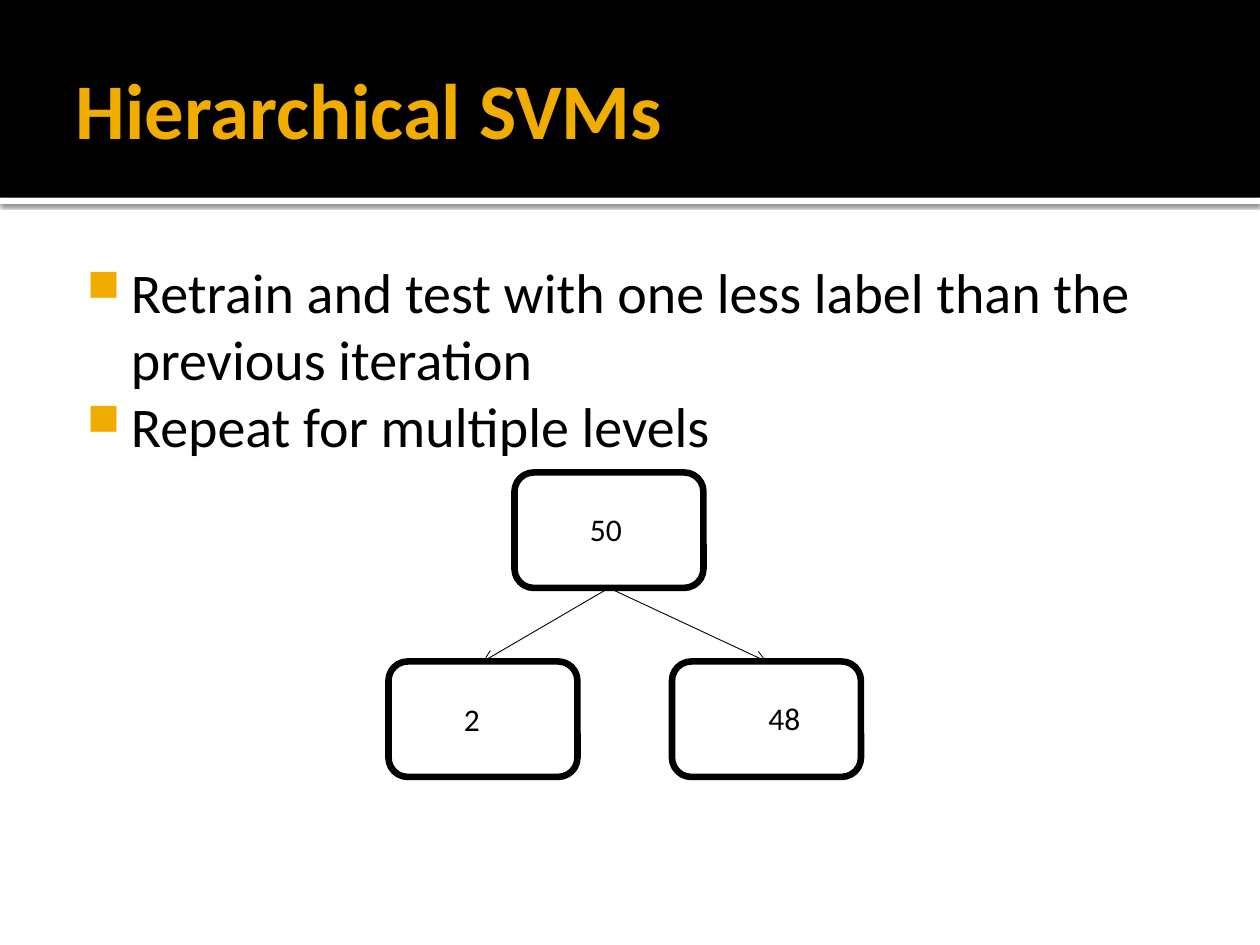
from lxml import etree
from pptx import Presentation
from pptx.dml.color import RGBColor
from pptx.enum import shapes, text
from pptx.oxml import parse_xml
from pptx.oxml.ns import nsdecls, qn
from pptx.util import Pt

BLACK = RGBColor(0, 0, 0)
WHITE = RGBColor(255, 255, 255)
GOLD = RGBColor(0xF0, 0xAD, 0)
FONT = "Calibri"
NODE_W, NODE_H = 108, 66
BULLETS = (
    "Retrain and test with one less label than the previous iteration",
    "Repeat for multiple levels",
)
# Node left and top, then label text, left, top and width
NODES = (
    (294, 270, "50", 330, 288, 48),
    (222, 378, "2", 258, 396.5, 36),
    (384, 378, "48", 432, 396, 54),
)
FORK = (348, 336)
ENDS = ((276, 378), (438, 378))


def style(para, size, color, bold=False):
    for run in para.runs:
        font = run.font
        font.name, font.size, font.bold = FONT, Pt(size), bold
        font.color.rgb = color


def inset(frame, *sides):
    """Set the left, top, right and bottom margins."""
    (frame.margin_left, frame.margin_top,
     frame.margin_right, frame.margin_bottom) = map(Pt, sides)


def add_box(slide, kind, x, y, w, h, fill, line=0):
    box = slide.shapes.add_shape(kind, Pt(x), Pt(y), Pt(w), Pt(h))
    box.shadow.inherit = False
    box.fill.solid()
    box.fill.fore_color.rgb = fill
    if line:
        box.line.color.rgb = BLACK
        box.line.width = Pt(line)
    else:
        box.line.fill.background()
    return box


def add_band(slide):
    """Draw the black header and the white strip that casts a shadow."""
    rect = shapes.MSO_SHAPE.RECTANGLE
    strip = add_box(slide, rect, 0, 113, 720, 3.6, WHITE)
    effects = strip._element.spPr.find(qn("a:effectLst"))
    effects.append(parse_xml(
        f'<a:outerShdw {nsdecls("a")} blurRad="{Pt(2.5)}" dist="{Pt(0.8)}" '
        'dir="5400000" algn="tl" rotWithShape="0"><a:srgbClr val="000000">'
        '<a:alpha val="60000"/></a:srgbClr></a:outerShdw>'))
    add_box(slide, rect, 0, 0, 720, 113, BLACK)


def set_title(slide, words):
    title = slide.shapes.title
    slide.shapes._spTree.append(title._element)  # in front of the band
    title.left, title.top, title.width, title.height = map(
        Pt, (36, 12.2, 648, 98.6))
    frame = title.text_frame
    frame.text = words
    frame.vertical_anchor = text.MSO_ANCHOR.MIDDLE
    inset(frame, 7.2, 3.6, 3.6, 3.6)
    para = frame.paragraphs[0]
    para.alignment = text.PP_ALIGN.LEFT
    style(para, 45, GOLD, True)


def add_bullet(para):
    props = para._p.get_or_add_pPr()
    props.set("marL", str(Pt(34.5)))
    props.set("indent", str(Pt(-25.2)))
    color = etree.SubElement(props, qn("a:buClr"))
    etree.SubElement(color, qn("a:srgbClr"), val=str(GOLD))
    etree.SubElement(props, qn("a:buSzPct"), val="80000")
    etree.SubElement(props, qn("a:buChar"), char="■")


def add_list(slide, items):
    box = slide.shapes.add_textbox(Pt(36), Pt(139.7), Pt(648), Pt(364.3))
    frame = box.text_frame
    frame.word_wrap = True
    inset(frame, 4.3, 7.2, 7.2, 3.6)
    frame.text = "\n".join(items)
    for para in frame.paragraphs:
        add_bullet(para)
        style(para, 32, BLACK)


def add_label(slide, words, x, y, w):
    box = slide.shapes.add_textbox(Pt(x), Pt(y), Pt(w), Pt(29))
    frame = box.text_frame
    frame.word_wrap = True
    frame.auto_size = text.MSO_AUTO_SIZE.SHAPE_TO_FIT_TEXT
    frame.text = words
    style(frame.paragraphs[0], 18, BLACK)


def add_arrow(slide, start, end):
    arrow = slide.shapes.add_connector(
        shapes.MSO_CONNECTOR.STRAIGHT, *map(Pt, start + end))
    arrow.line.color.rgb = BLACK
    arrow.line.width = Pt(0.5)
    etree.SubElement(arrow.line._get_or_add_ln(), qn("a:tailEnd"), type="arrow")
    etree.SubElement(arrow._element.spPr, qn("a:effectLst"))


def main():
    deck = Presentation()
    deck.slide_width, deck.slide_height = Pt(720), Pt(540)
    slide = deck.slides.add_slide(deck.slide_layouts[5])
    add_band(slide)
    set_title(slide, "Hierarchical SVMs")
    add_list(slide, BULLETS)
    for x, y, *label in NODES:
        add_box(slide, shapes.MSO_SHAPE.ROUNDED_RECTANGLE,
                x, y, NODE_W, NODE_H, WHITE, 3.78)
        add_label(slide, *label)
    for end in ENDS:
        add_arrow(slide, FORK, end)
    deck.save("out.pptx")


if __name__ == "__main__":
    main()
